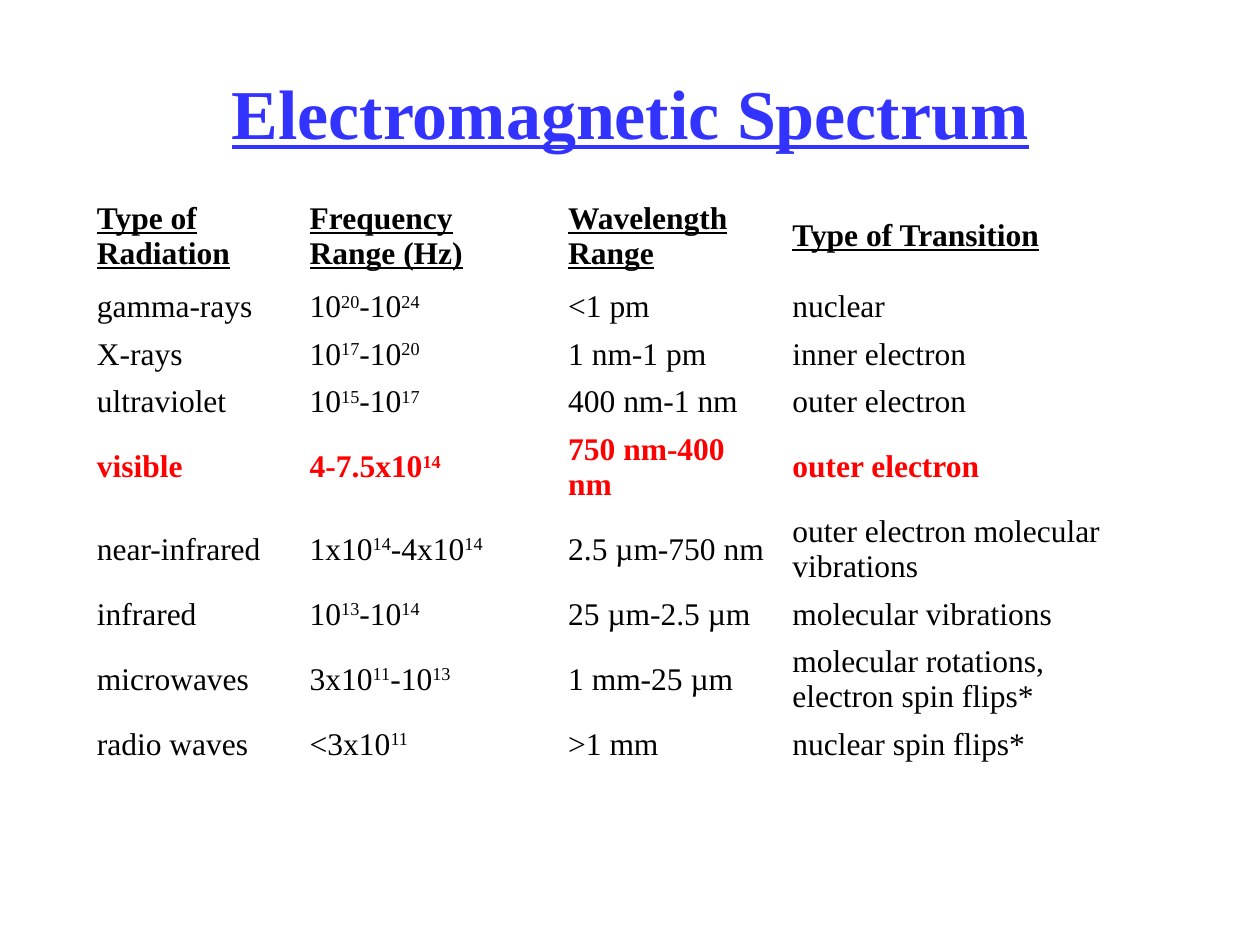
from pptx import Presentation
from pptx.dml.color import RGBColor
from pptx.enum.text import MSO_ANCHOR as Anchor, PP_ALIGN as Align
from pptx.util import Cm, Pt

FONT = "Times New Roman"
BLACK, RED, BLUE = "000000", "FF0000", "3333FF"
COLUMN_WIDTHS = (4.29, 5.21, 4.52, 8)
HEADER_HEIGHT, ROW_HEIGHT = 1.9, 0.64
HIGHLIGHTED = "visible"

# Text between carets is superscript; a line break starts a new paragraph
ROWS = [
    ("Type of Radiation", "Frequency Range (Hz)", "Wavelength Range", "Type of Transition"),
    ("gamma-rays", "10^20^-10^24^", "<1 pm", "nuclear"),
    ("X-rays", "10^17^-10^20^", "1 nm-1 pm", "inner electron"),
    ("ultraviolet", "10^15^-10^17^", "400 nm-1 nm", "outer electron"),
    ("visible", "4-7.5x10^14^", "750 nm-400 nm", "outer electron"),
    ("near-infrared", "1x10^14^-4x10^14^", "2.5 µm-750 nm",
     "outer electron molecular vibrations"),
    ("infrared", "10^13^-10^14^", "25 µm-2.5 µm", "molecular vibrations"),
    ("microwaves", "3x10^11^-10^13^", "1 mm-25 µm",
     "molecular rotations,\nelectron spin flips*"),
    ("radio waves", "<3x10^11^", ">1 mm", "nuclear spin flips*"),
]


def set_font(paragraph, size, color, bold=False, underline=False):
    font = paragraph.font
    font.name, font.size = FONT, Pt(size)
    font.bold, font.underline = bold, underline
    font.color.rgb = RGBColor.from_string(color)


def add_runs(paragraph, text):
    for index, part in enumerate(text.split("^")):
        if part:
            run = paragraph.add_run()
            run.text = part
            if index % 2:
                run._r.get_or_add_rPr().set("baseline", "30000")


def add_title(slide, text):
    title = slide.shapes.title
    title.left, title.top, title.width, title.height = Cm(4.22), Cm(1.27), Cm(16.97), Cm(1.96)
    frame = title.text_frame
    frame.text = text
    frame.word_wrap = False
    frame.vertical_anchor = Anchor.MIDDLE
    paragraph = frame.paragraphs[0]
    paragraph.alignment = Align.CENTER
    set_font(paragraph, 40, BLUE, bold=True, underline=True)


def fill_cell(cell, text, color, bold, underline):
    cell.fill.background()
    cell.vertical_anchor = Anchor.MIDDLE
    frame = cell.text_frame
    for index, line in enumerate(text.split("\n")):
        paragraph = frame.add_paragraph() if index else frame.paragraphs[0]
        set_font(paragraph, 18, color, bold, underline)
        add_runs(paragraph, line)


def add_spectrum_table(slide):
    height = HEADER_HEIGHT + ROW_HEIGHT * (len(ROWS) - 1)
    table = slide.shapes.add_table(
        len(ROWS), len(COLUMN_WIDTHS), Cm(1.7), Cm(3.81),
        Cm(sum(COLUMN_WIDTHS)), Cm(height)).table
    table.first_row = table.horz_banding = False
    for column, width in zip(table.columns, COLUMN_WIDTHS):
        column.width = Cm(width)
    for row_index, (row, texts) in enumerate(zip(table.rows, ROWS)):
        header = row_index == 0
        highlighted = texts[0] == HIGHLIGHTED
        row.height = Cm(HEADER_HEIGHT if header else ROW_HEIGHT)
        for cell, text in zip(row.cells, texts):
            fill_cell(cell, text, RED if highlighted else BLACK,
                      bold=header or highlighted, underline=header)


def main():
    presentation = Presentation()
    presentation.slide_width, presentation.slide_height = Cm(25.4), Cm(19.05)
    # Title Only layout
    slide = presentation.slides.add_slide(presentation.slide_layouts[5])
    add_spectrum_table(slide)
    add_title(slide, "Electromagnetic Spectrum")
    presentation.save("out.pptx")


if __name__ == "__main__":
    main()
